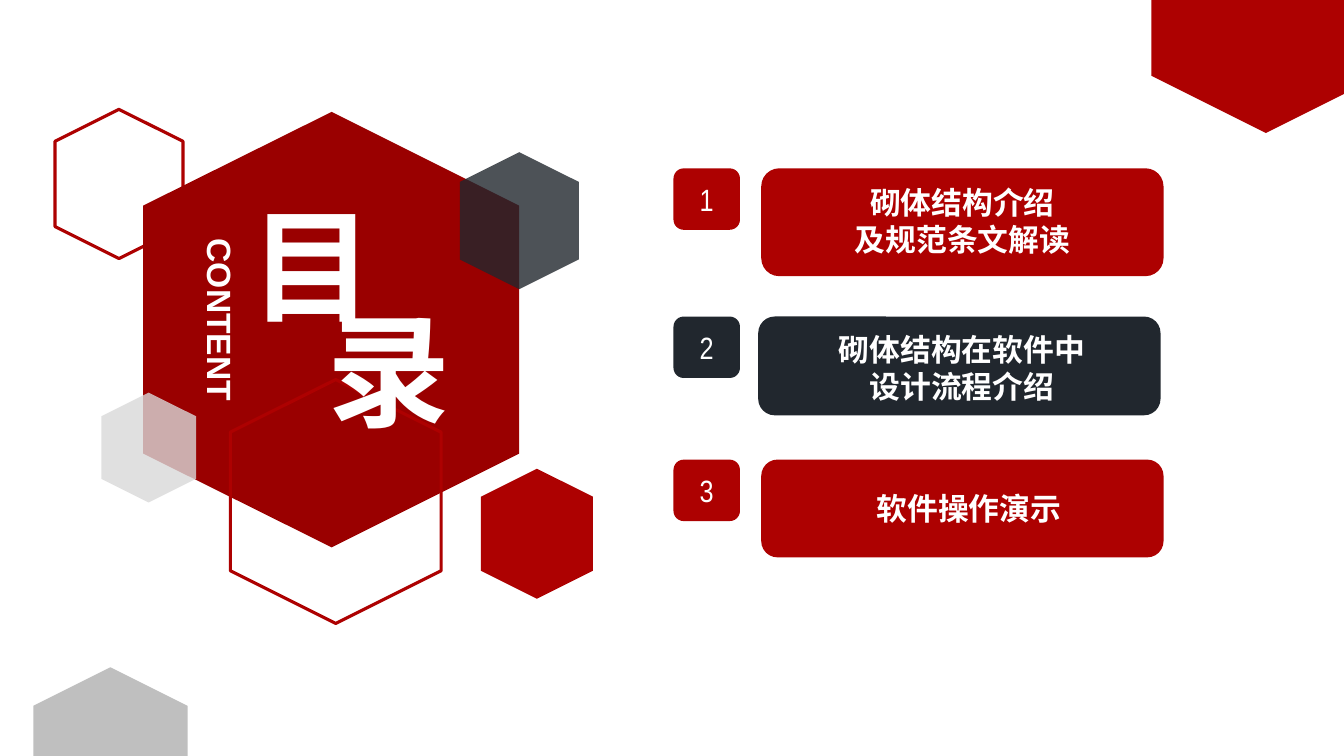
from lxml.etree import SubElement
from pptx import Presentation
from pptx.dml.color import RGBColor as Rgb
from pptx.enum.shapes import MSO_SHAPE as Kind
from pptx.enum.text import MSO_ANCHOR as Anchor, PP_ALIGN as Align
from pptx.oxml.ns import qn
from pptx.util import Inches, Pt

COLORS = {
    "red": "AD0101",
    "deep": "9A0000",
    "dark": "21272E",
    "pale": "D9D9D9",
    "gray": "BFBFBF",
    "white": "FFFFFF",
}


def rgb(name):
    """Return the named colour."""
    return Rgb.from_string(COLORS[name])


def paint(shape, fill=None, line=None, alpha=None):
    """Set fill, outline and opacity in percent, without shadow."""
    shape.shadow.inherit = False
    if fill:
        shape.fill.solid()
        shape.fill.fore_color.rgb = rgb(fill)
    else:
        shape.fill.background()
    if line:
        shape.line.color.rgb = rgb(line)
        shape.line.width = Pt(2.25)
    else:
        shape.line.fill.background()
    if alpha:
        tint = shape.fill._xPr.find(".//" + qn("a:srgbClr"))
        SubElement(tint, qn("a:alpha"), val=str(alpha * 1000))


def write(shape, text, size, font="Arial", bold=True, align=Align.CENTER,
          inset=(0.1, 0.05), anchor=Anchor.TOP, gap=None):
    """Fill a shape with white text, one paragraph a line."""
    frame = shape.text_frame
    frame.word_wrap = True
    frame.vertical_anchor = anchor
    frame.margin_left = frame.margin_right = Inches(inset[0])
    frame.margin_top = frame.margin_bottom = Inches(inset[1])
    frame.text = text
    for para in frame.paragraphs:
        para.alignment = align
        if gap:
            para.line_spacing = gap
        para.font.name = font
        para.font.size = Pt(size)
        para.font.bold = bold
        para.font.color.rgb = rgb("white")


def block(shapes, kind, box, fill):
    """Add a plain filled shape."""
    shape = shapes.add_shape(kind, *map(Inches, box))
    paint(shape, fill)
    return shape


def hexa(shapes, box, **look):
    """Add a hexagon that stands on its point."""
    shape = shapes.add_shape(Kind.HEXAGON, *map(Inches, box))
    shape.rotation = 90
    paint(shape, **look)


def crest(shapes):
    """Add the large hexagon behind the heading."""
    points = [(3.29, 1.11), (1.42, 2.04), (1.42, 4.5),
              (3.29, 5.43), (5.15, 4.5), (5.15, 2.04)]
    spots = [(Inches(x), Inches(y)) for x, y in points]
    pen = shapes.build_freeform(*spots[0])
    pen.add_line_segments(spots[1:], close=True)
    paint(pen.convert_to_shape(), "deep")


def label(shapes, box, text, size, turn=0, gap=None):
    """Add a heading text box."""
    shape = shapes.add_textbox(*map(Inches, box))
    shape.rotation = turn
    write(shape, text, size, align=Align.JUSTIFY, gap=gap)


def entry(shapes, num, fill, card, body, text):
    """Add a numbered badge and its card."""
    badge = block(shapes, Kind.ROUNDED_RECTANGLE,
                  (6.68, card[1], 0.66, 0.61), fill)
    write(badge, str(num), 22, "Arial Narrow", False,
          inset=(0.13, 0.07), anchor=Anchor.MIDDLE)
    group = shapes.add_group_shape().shapes
    block(group, Kind.ROUNDED_RECTANGLE, card, fill)
    panel = block(group, Kind.RECTANGLE, body, fill)
    write(panel, text, 22, inset=(0.18, 0.09))


def main():
    """Build the contents slide."""
    deck = Presentation()
    deck.slide_width, deck.slide_height = Inches(13.33), Inches(7.5)
    shapes = deck.slides.add_slide(deck.slide_layouts[6]).shapes

    hexa(shapes, (0.44, 1.19, 1.48, 1.27), line="red")
    crest(shapes)
    hexa(shapes, (2.12, 3.93, 2.42, 2.09), line="red")
    hexa(shapes, (4.47, 1.6, 1.36, 1.18), fill="dark", alpha=80)
    hexa(shapes, (0.93, 3.97, 1.09, 0.94), fill="pale", alpha=80)
    hexa(shapes, (0.21, 6.74, 1.77, 1.53), fill="gray")
    hexa(shapes, (4.68, 4.74, 1.29, 1.11), fill="red")
    hexa(shapes, (11.24, -1.13, 2.63, 2.27), fill="red")

    label(shapes, (1.12, 3.09, 2.06, 0.42), "CONTENT", 24, 90, 0.8)
    label(shapes, (2.39, 1.83, 1.57, 1.58), "目", 88)
    label(shapes, (3.15, 2.87, 1.57, 1.58), "录", 88)

    items = [
        ("red", (7.55, 1.67, 3.99, 1.07), (7.64, 1.73, 3.81, 0.92),
         "砌体结构介绍\n及规范条文解读"),
        ("dark", (7.52, 3.14, 3.99, 0.98), (7.96, 3.19, 3.16, 0.92),
         "砌体结构在软件中\n设计流程介绍"),
        ("red", (7.55, 4.56, 3.99, 0.97), (7.8, 4.77, 3.62, 0.55),
         "软件操作演示"),
    ]
    for num, item in enumerate(items, 1):
        entry(shapes, num, *item)
    deck.save("out.pptx")


if __name__ == "__main__":
    main()
